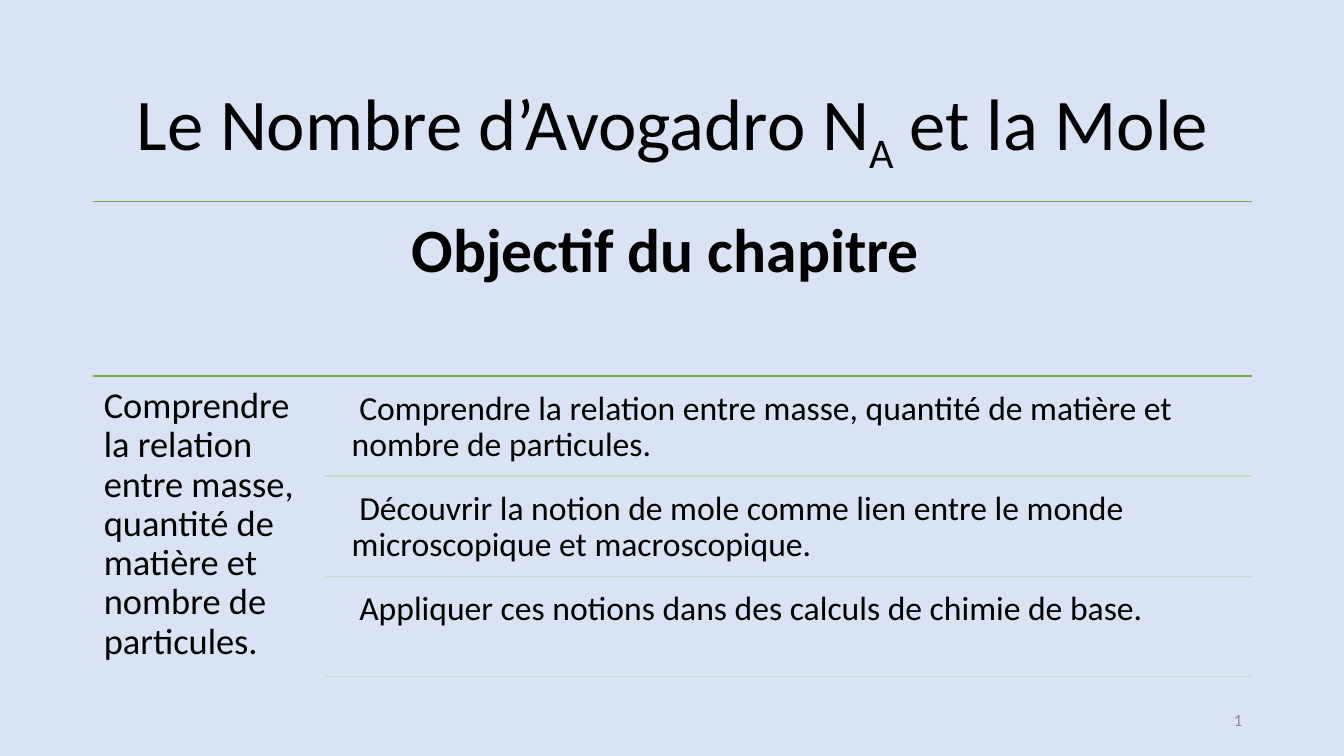
from dataclasses import dataclass

import pptx
import pptx.dml.color
import pptx.enum.shapes
import pptx.enum.text
import pptx.oxml.xmlchemy
import pptx.util
from pptx.util import Inches

ALIGN = pptx.enum.text.PP_ALIGN
ANCHOR = pptx.enum.text.MSO_ANCHOR
COLORS = {
    "background": "DAE3F3",
    "text": "000000",
    "number": "8C8C8C",
    "section": "70AD47",
    "goal": "C9DBC1",
}
FONT_NAME = "Calibri"
LEFT, RIGHT = 0.92, 12.42
GOALS_TOP, GOALS_BOTTOM = 3.73, 6.71


@dataclass
class Label:
    text: str
    left: float
    top: float
    width: float
    height: float
    size: float
    inset: float = 0.1
    align: ALIGN = ALIGN.LEFT
    anchor: ANCHOR = ANCHOR.TOP
    bold: bool = False
    color: str = "text"
    subscript: str = ""
    ending: str = ""


@dataclass
class Rule:
    left: float
    top: float
    color: str


def rgb(name: str) -> pptx.dml.color.RGBColor:
    return pptx.dml.color.RGBColor.from_string(COLORS[name])


def draw_label(page, label: Label):
    """Add a text box and return its only paragraph."""
    box = page.shapes.add_textbox(
        Inches(label.left), Inches(label.top), Inches(label.width), Inches(label.height)
    )
    inset = Inches(label.inset)
    frame_format = {
        "word_wrap": True,
        "vertical_anchor": label.anchor,
        "margin_left": inset,
        "margin_right": inset,
        "margin_top": inset,
        "margin_bottom": inset,
    }
    for name, value in frame_format.items():
        setattr(box.text_frame, name, value)
    para = box.text_frame.paragraphs[0]
    para.alignment = label.align
    para.line_spacing = 0.9
    for text in (label.text, label.subscript, label.ending):
        if not text:
            continue
        span = para.add_run()
        span.text = text
        span_format = {
            "name": FONT_NAME,
            "size": pptx.util.Pt(label.size),
            "bold": label.bold,
        }
        for name, value in span_format.items():
            setattr(span.font, name, value)
        span.font.color.rgb = rgb(label.color)
        if text == label.subscript:
            span.font._element.set("baseline", "-25000")
    return para


def draw_rule(page, rule: Rule) -> None:
    line = page.shapes.add_connector(
        pptx.enum.shapes.MSO_CONNECTOR.STRAIGHT,
        Inches(rule.left), Inches(rule.top), Inches(RIGHT), Inches(rule.top),
    )
    line.line.color.rgb = rgb(rule.color)
    line.line.width = pptx.util.Pt(1)
    properties = line._element.spPr
    properties.append(pptx.oxml.xmlchemy.OxmlElement("a:effectLst"))


def make_number_field(para) -> None:
    """Turn the paragraph's run into a slide number field."""
    span = para.runs[0]._r
    field = pptx.oxml.xmlchemy.OxmlElement("a:fld")
    field.set("id", "{B6F15528-21DE-4FAA-801E-634DDDAF4B2B}")
    field.set("type", "slidenum")
    span.addprevious(field)
    for child in list(span):
        field.append(child)
    span.getparent().remove(span)


GOALS = [
    " Comprendre la relation entre masse, quantité de matière et nombre de particules.",
    " Découvrir la notion de mole comme lien entre le monde microscopique et macroscopique.",
    " Appliquer ces notions dans des calculs de chimie de base.",
]
LABELS = [
    Label("Le Nombre d’Avogadro N", LEFT, 0.61, 11.5, 1.24, 52, align=ALIGN.CENTER,
          anchor=ANCHOR.MIDDLE, subscript="A", ending=" et la Mole"),
    Label("Objectif du chapitre ", LEFT, 2, 11.5, 1.73, 44, inset=0.18,
          align=ALIGN.CENTER, bold=True),
    Label("Comprendre la relation entre masse, quantité de matière et nombre de particules.",
          LEFT, GOALS_TOP, 2.3, 3.03, 26, inset=0.11),
]
NUMBER = Label("1", 9.42, 6.95, 3, 0.4, 12, align=ALIGN.RIGHT,
               anchor=ANCHOR.MIDDLE, color="number")


def main() -> None:
    deck = pptx.Presentation()
    deck.slide_width, deck.slide_height = Inches(13.33), Inches(7.5)
    page = deck.slides.add_slide(deck.slide_layouts[6])
    page.background.fill.solid()
    page.background.fill.fore_color.rgb = rgb("background")

    # Title, section heading and side column
    for label in LABELS:
        draw_label(page, label)
    for top in (2, GOALS_TOP):
        draw_rule(page, Rule(LEFT, top, "section"))

    # Goals, each closed by a pale rule
    goal_step = (GOALS_BOTTOM - GOALS_TOP) / len(GOALS)
    for index, goal in enumerate(GOALS):
        top = GOALS_TOP + index * goal_step
        draw_label(page, Label(goal, 3.39, top + 0.05, 9.03, 0.95, 24))
        draw_rule(page, Rule(3.22, top + goal_step, "goal"))

    # Slide number
    make_number_field(draw_label(page, NUMBER))
    deck.save("out.pptx")


if __name__ == "__main__":
    main()
